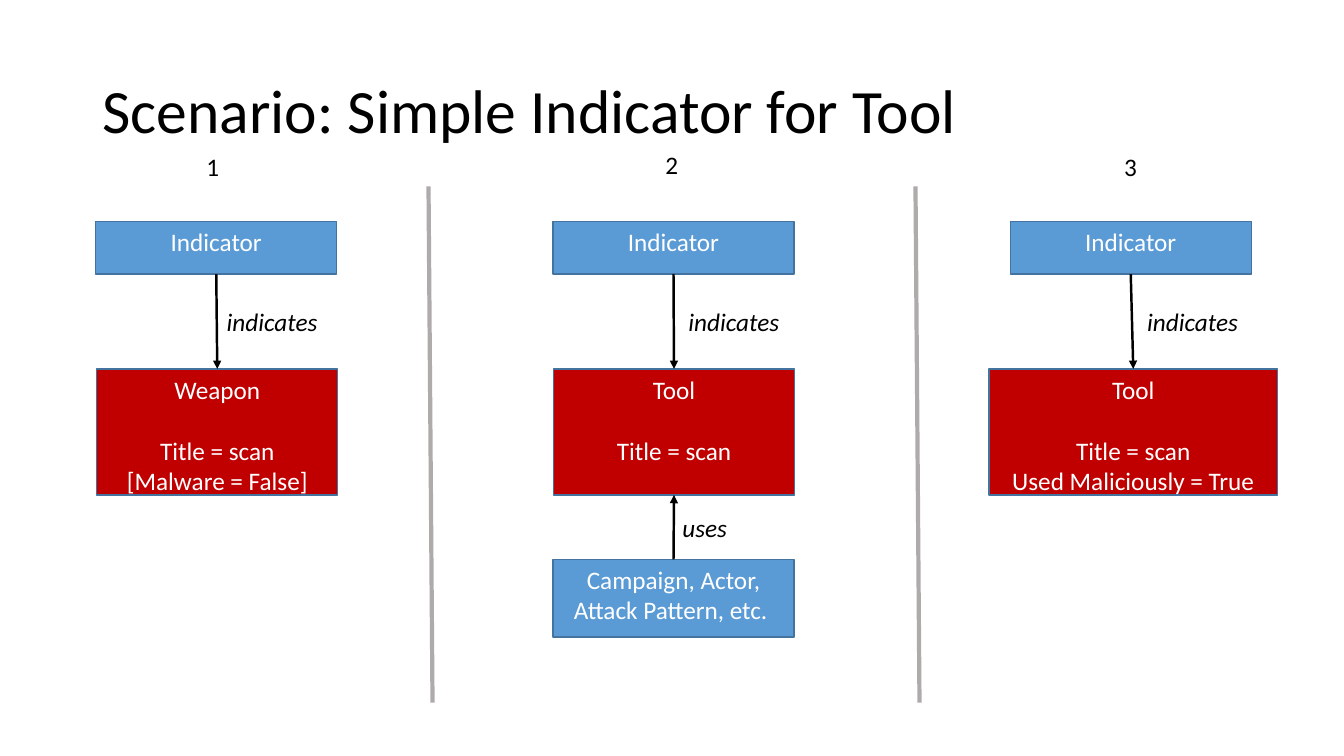
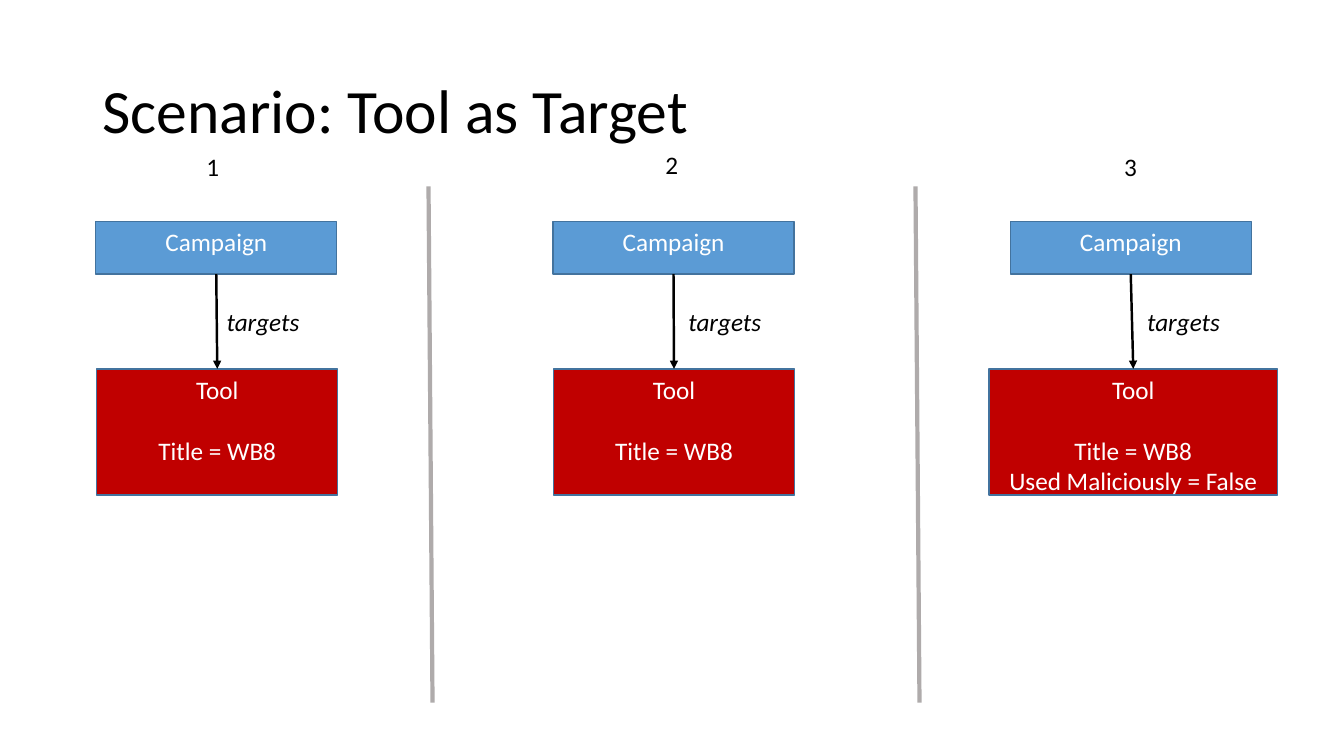
from dataclasses import dataclass
from typing import Optional

from lxml.etree import SubElement
from pptx import Presentation
from pptx.dml.color import RGBColor
from pptx.enum.shapes import MSO_CONNECTOR as Connector, MSO_SHAPE as Preset
from pptx.enum.text import MSO_ANCHOR as Anchor, MSO_AUTO_SIZE as AutoSize, PP_ALIGN as Align
from pptx.oxml.ns import qn
from pptx.shapes.autoshape import Shape
from pptx.shapes.connector import Connector as Line
from pptx.slide import Slide
from pptx.text.text import _Paragraph as Paragraph
from pptx.util import Inches, Pt

# Shared style
BLACK = RGBColor(0x00, 0x00, 0x00)
WHITE = RGBColor(0xFF, 0xFF, 0xFF)
BLUE = RGBColor(0x5B, 0x9B, 0xD5)
RED = RGBColor(0xC0, 0x00, 0x00)
OUTLINE = RGBColor(0x43, 0x73, 0x9E)
GREY = RGBColor(0xAF, 0xAB, 0xAB)
FONT = "Calibri"
BODY_SIZE = 18
TITLE_SIZE = 44
LINE_GAP = 22  # height of one body line, in points

# Shared geometry, in inches
BOX_WIDTH = 2.39
FIRST_LEFT, LAST_LEFT = 0.95, 10.02
PITCH = (LAST_LEFT - FIRST_LEFT) / 2
SOURCE_TOP, SOURCE_HEIGHT = 2.2, 0.52
TARGET_TOP, TARGET_HEIGHT = 3.66, 1.25
USER_TOP, USER_HEIGHT = 5.55, 0.77
DIVIDER_TOP, DIVIDER_BOTTOM, DIVIDER_SLANT = 1.85, 6.97, 0.04
DIVIDER_LEFTS = (4.25, 9.08)
LABEL_HEIGHT = 0.4
TOP_SITE, BOTTOM_SITE = 0, 2


@dataclass(frozen=True)
class Column:
    number_left: float
    number_top: float
    relation_left: float
    target_left: float
    target_width: float = BOX_WIDTH


@dataclass(frozen=True)
class Target:
    heading: str
    details: tuple[str, ...]


@dataclass(frozen=True)
class Scenario:
    title: str
    source: str
    relation: str
    relation_width: float
    targets: tuple[Target, ...]
    tool_user: Optional[str] = None


COLUMNS = (
    Column(1.95, 1.45, 2.15, 0.96),
    Column(6.5, 1.43, 6.73, 5.49),
    Column(11.05, 1.45, 11.28, 9.81, 2.86),
)

SCENARIOS = (
    Scenario(
        "Scenario: Simple Indicator for Tool", "Indicator", "indicates", 1.11,
        (
            Target("Weapon", ("Title = scan", "[Malware = False]")),
            Target("Tool", ("Title = scan",)),
            Target("Tool", ("Title = scan", "Used Maliciously = True")),
        ),
        "Campaign, Actor, Attack Pattern, etc. ",
    ),
    Scenario(
        "Scenario: Tool as Target", "Campaign", "targets", 0.93,
        (
            Target("Tool", ("Title = WB8",)),
            Target("Tool", ("Title = WB8",)),
            Target("Tool", ("Title = WB8", "Used Maliciously = False")),
        ),
    ),
)


def add_run(paragraph: Paragraph, text: str, color: RGBColor,
            size: int = BODY_SIZE, italic: bool = False) -> None:
    run = paragraph.add_run()
    run.text = text
    run.font.name = FONT
    run.font.size = Pt(size)
    run.font.italic = italic
    run.font.color.rgb = color


def add_title(slide: Slide, text: str) -> None:
    box = slide.shapes.add_textbox(Inches(0.92), Inches(0.4), Inches(11.5), Inches(1.45))
    frame = box.text_frame
    frame.word_wrap = True
    frame.vertical_anchor = Anchor.MIDDLE
    frame.paragraphs[0].line_spacing = 0.9
    add_run(frame.paragraphs[0], text, BLACK, TITLE_SIZE)


def add_label(slide: Slide, text: str, left: float, top: float, width: float,
              italic: bool = True) -> None:
    box = slide.shapes.add_textbox(Inches(left), Inches(top), Inches(width), Inches(LABEL_HEIGHT))
    box.text_frame.word_wrap = False
    box.text_frame.auto_size = AutoSize.SHAPE_TO_FIT_TEXT
    add_run(box.text_frame.paragraphs[0], text, BLACK, italic=italic)


def add_box(slide: Slide, lines: tuple[str, ...], left: float, top: float,
            width: float, height: float, fill: RGBColor) -> Shape:
    box = slide.shapes.add_shape(
        Preset.RECTANGLE, Inches(left), Inches(top), Inches(width), Inches(height))
    box.shadow.inherit = False
    box.fill.solid()
    box.fill.fore_color.rgb = fill
    box.line.color.rgb = OUTLINE
    box.line.width = Pt(1)
    frame = box.text_frame
    frame.word_wrap = True
    frame.vertical_anchor = Anchor.TOP
    for index, text in enumerate(lines):
        paragraph = frame.add_paragraph() if index else frame.paragraphs[0]
        paragraph.alignment = Align.CENTER
        if index == 1:  # details stand one line below the heading
            paragraph.space_before = Pt(LINE_GAP)
        add_run(paragraph, text, WHITE)
    return box


def add_line(slide: Slide, start: tuple[float, float], end: tuple[float, float],
             color: RGBColor, width: float) -> Line:
    line = slide.shapes.add_connector(
        Connector.STRAIGHT, *(Inches(value) for value in start + end))
    line.line.color.rgb = color
    line.line.width = Pt(width)
    SubElement(line._element.spPr, qn("a:effectLst"))
    return line


def add_arrow(slide: Slide, origin: Shape, origin_site: int,
              goal: Shape, goal_site: int) -> None:
    arrow = add_line(slide, (0, 0), (0, 0), BLACK, 1.75)
    arrow.begin_connect(origin, origin_site)
    arrow.end_connect(goal, goal_site)
    SubElement(arrow.line._get_or_add_ln(), qn("a:tailEnd"), type="triangle")


def add_scenario(slide: Slide, scenario: Scenario) -> None:
    add_title(slide, scenario.title)

    # Dividers between the columns
    for left in DIVIDER_LEFTS:
        add_line(slide, (left, DIVIDER_TOP), (left + DIVIDER_SLANT, DIVIDER_BOTTOM), GREY, 3)

    # Numbered alternatives
    target_boxes = []
    for index, (column, target) in enumerate(zip(COLUMNS, scenario.targets)):
        add_label(slide, str(index + 1), column.number_left, column.number_top, 0.33, italic=False)
        source_box = add_box(slide, (scenario.source,), FIRST_LEFT + index * PITCH,
                             SOURCE_TOP, BOX_WIDTH, SOURCE_HEIGHT, BLUE)
        target_box = add_box(slide, (target.heading, *target.details), column.target_left,
                             TARGET_TOP, column.target_width, TARGET_HEIGHT, RED)
        add_arrow(slide, source_box, BOTTOM_SITE, target_box, TOP_SITE)
        add_label(slide, scenario.relation, column.relation_left, 2.99, scenario.relation_width)
        target_boxes.append(target_box)

    # Who uses the tool in the middle alternative
    if scenario.tool_user:
        user_box = add_box(slide, (scenario.tool_user,), FIRST_LEFT + PITCH,
                           USER_TOP, BOX_WIDTH, USER_HEIGHT, BLUE)
        add_arrow(slide, user_box, TOP_SITE, target_boxes[1], BOTTOM_SITE)
        add_label(slide, "uses", 6.67, 5.03, 0.65)


def main() -> None:
    deck = Presentation()
    deck.slide_width, deck.slide_height = Inches(13.33), Inches(7.5)
    blank = deck.slide_layouts[6]
    for scenario in SCENARIOS:
        add_scenario(deck.slides.add_slide(blank), scenario)
    deck.save("out.pptx")


if __name__ == "__main__":
    main()
